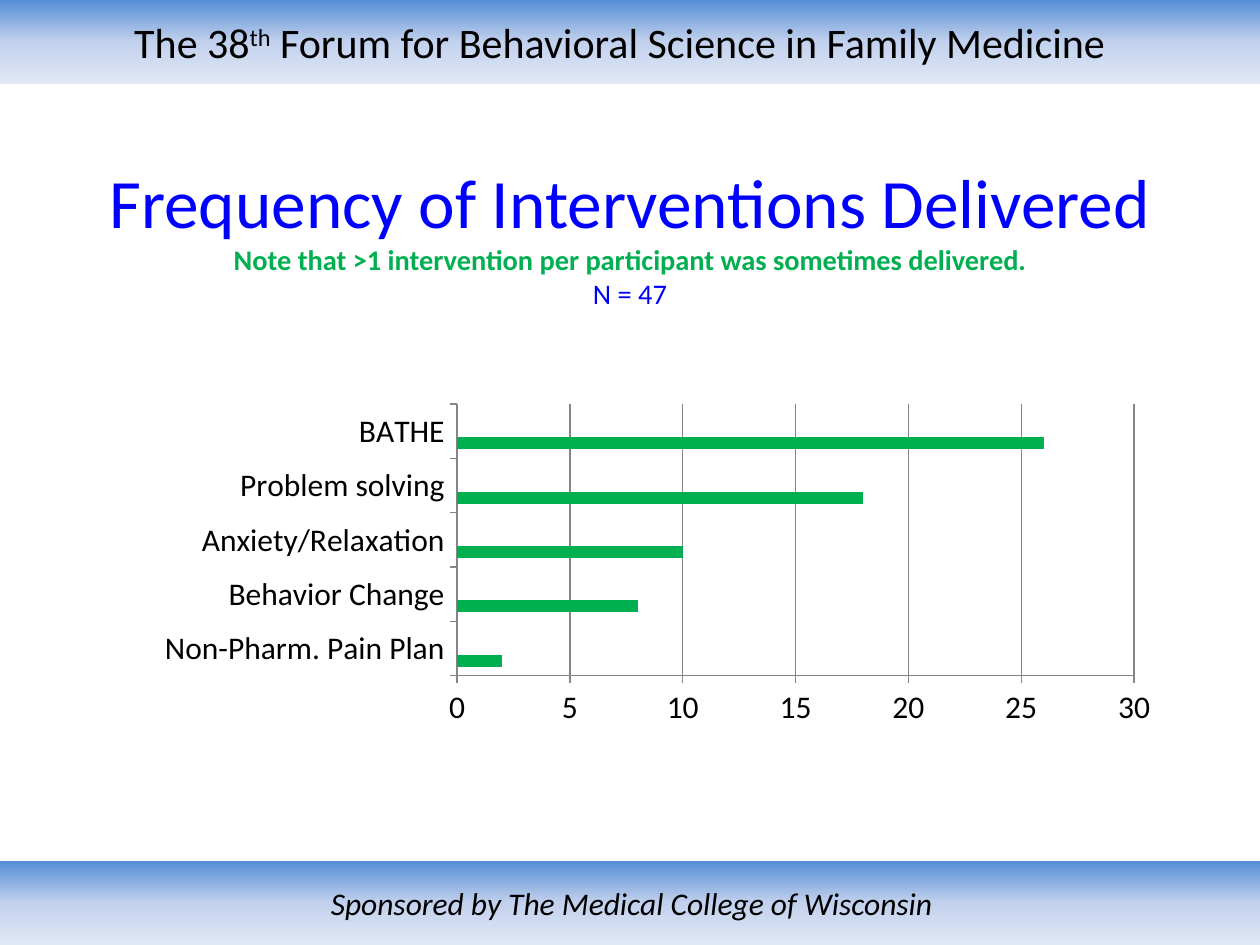
from lxml import etree
from pptx import Presentation
from pptx import oxml
from pptx.chart.data import CategoryChartData
from pptx.dml.color import RGBColor
from pptx.enum import chart as charts, shapes, text
from pptx.oxml import ns
from pptx.util import Pt

FONT = "Calibri"
COLORS = {
    "black": "000000", "blue": "0000FF", "green": "00B050", "red": "C0504D",
    "olive": "9BBB59", "axis": "868686",
    "band_top": "558ED5", "band_middle": "C2D1ED", "band_bottom": "E1E8F5",
}
BAND_STOPS = [(0, "band_top"), (50, "band_middle"), (100, "band_bottom")]
PLOT_AREA = {"x": 0.345, "y": 0.069, "w": 0.626, "h": 0.719}
INTERVENTIONS = {
    "Non-Pharm. Pain Plan": 2, "Behavior Change": 8, "Anxiety/Relaxation": 10,
    "Problem solving": 18, "BATHE": 26,
}


def rgb(name):
    return RGBColor.from_string(COLORS[name])


def add_span(para, words, size, color="black", bold=False, italic=False, baseline=0):
    span = para.add_run()
    span.text = words
    font = span.font
    font.name, font.size, font.bold, font.italic = FONT, Pt(size), bold, italic
    font.color.rgb = rgb(color)
    if baseline:
        span._r.get_or_add_rPr().set("baseline", str(baseline * 1000))


def center_text(shape):
    frame = shape.text_frame
    frame.word_wrap = True
    frame.vertical_anchor = text.MSO_ANCHOR.MIDDLE
    frame.paragraphs[0].alignment = text.PP_ALIGN.CENTER
    return frame


def add_band(page, top, width):
    """Add a full-width gradient band and return its text frame."""
    band = page.shapes.add_shape(
        shapes.MSO_SHAPE.RECTANGLE, 0, Pt(top), Pt(width), Pt(48))
    band.shadow.inherit = False
    band.line.fill.background()
    stops = "".join(
        f'<a:gs pos="{place * 1000}"><a:srgbClr val="{COLORS[name]}"/></a:gs>'
        for place, name in BAND_STOPS)
    gradient = oxml.parse_xml(
        f'<a:gradFill {ns.nsdecls("a")} rotWithShape="1"><a:gsLst>{stops}</a:gsLst>'
        '<a:lin ang="5400000" scaled="0"/></a:gradFill>')
    band._element.spPr.find(ns.qn("a:prstGeom")).addnext(gradient)
    return center_text(band)


def add_title(page):
    box = page.shapes.add_textbox(Pt(36), Pt(113.76), Pt(648), Pt(60.48))
    frame = center_text(box)
    frame.margin_bottom = Pt(23)  # lifts the lines above the middle of the box
    add_span(frame.paragraphs[0], "Frequency of Interventions Delivered", 39.6, "blue")
    for words, color, bold in [
        ("Note that >1 intervention per participant was sometimes delivered.", "green", True),
        ("N = 47", "blue", False),
    ]:
        para = frame.add_paragraph()
        para.alignment = text.PP_ALIGN.CENTER
        add_span(para, words, 16.2, color, bold)


def place_plot_area(chart):
    plot_area = chart._chartSpace.chart.plotArea
    for old in plot_area.findall(ns.qn("c:layout")):
        plot_area.remove(old)
    layout = etree.Element(ns.qn("c:layout"))
    manual = etree.SubElement(layout, ns.qn("c:manualLayout"))
    settings = {"layoutTarget": "inner", "xMode": "edge", "yMode": "edge", **PLOT_AREA}
    for tag, value in settings.items():
        etree.SubElement(manual, ns.qn(f"c:{tag}")).set("val", str(value))
    plot_area.insert(0, layout)


def add_bar_chart(page):
    data = CategoryChartData()
    data.categories = list(INTERVENTIONS)
    # The two empty series keep their room beside each bar
    data.add_series("Series 1", list(INTERVENTIONS.values()))
    for name in ("Series 2", "Series 3"):
        data.add_series(name, [None] * len(INTERVENTIONS))
    chart = page.shapes.add_chart(
        charts.XL_CHART_TYPE.BAR_CLUSTERED, Pt(48), Pt(216), Pt(618), Pt(216), data).chart
    chart.has_title = chart.has_legend = False
    chart.font.name, chart.font.size = FONT, Pt(18)
    chart.font.color.rgb = rgb("black")

    plot = chart.plots[0]
    plot.vary_by_categories = False
    plot.gap_width, plot.overlap = 150, 0
    for series, color in zip(plot.series, ("green", "red", "olive")):
        series.format.fill.solid()
        series.format.fill.fore_color.rgb = rgb(color)
        series.invert_if_negative = False

    values, categories = chart.value_axis, chart.category_axis
    values.minimum_scale, values.maximum_scale, values.major_unit = 0, 30, 5
    values.has_major_gridlines = True
    categories.has_major_gridlines = False
    for axis in (values, categories):
        axis.major_tick_mark = charts.XL_TICK_MARK.OUTSIDE
        axis.minor_tick_mark = charts.XL_TICK_MARK.NONE
    for lines in (values, categories, values.major_gridlines):
        lines.format.line.color.rgb = rgb("axis")
        lines.format.line.width = Pt(0.75)
    place_plot_area(chart)


def main():
    deck = Presentation()
    deck.slide_width, deck.slide_height = Pt(720), Pt(540)
    page = deck.slides.add_slide(deck.slide_layouts[6])

    # Header band
    header = add_band(page, 0, 720)
    header.margin_right = Pt(18.6)
    para = header.paragraphs[0]
    add_span(para, "The 38", 24)
    add_span(para, "th", 24, baseline=30)
    add_span(para, " Forum for Behavioral Science in Family Medicine", 24)

    # Footer band
    footer = add_band(page, 492, 722)
    add_span(footer.paragraphs[0], "Sponsored by The Medical College of Wisconsin",
             18, italic=True)

    # Title and chart
    add_title(page)
    add_bar_chart(page)
    deck.save("out.pptx")


if __name__ == "__main__":
    main()
